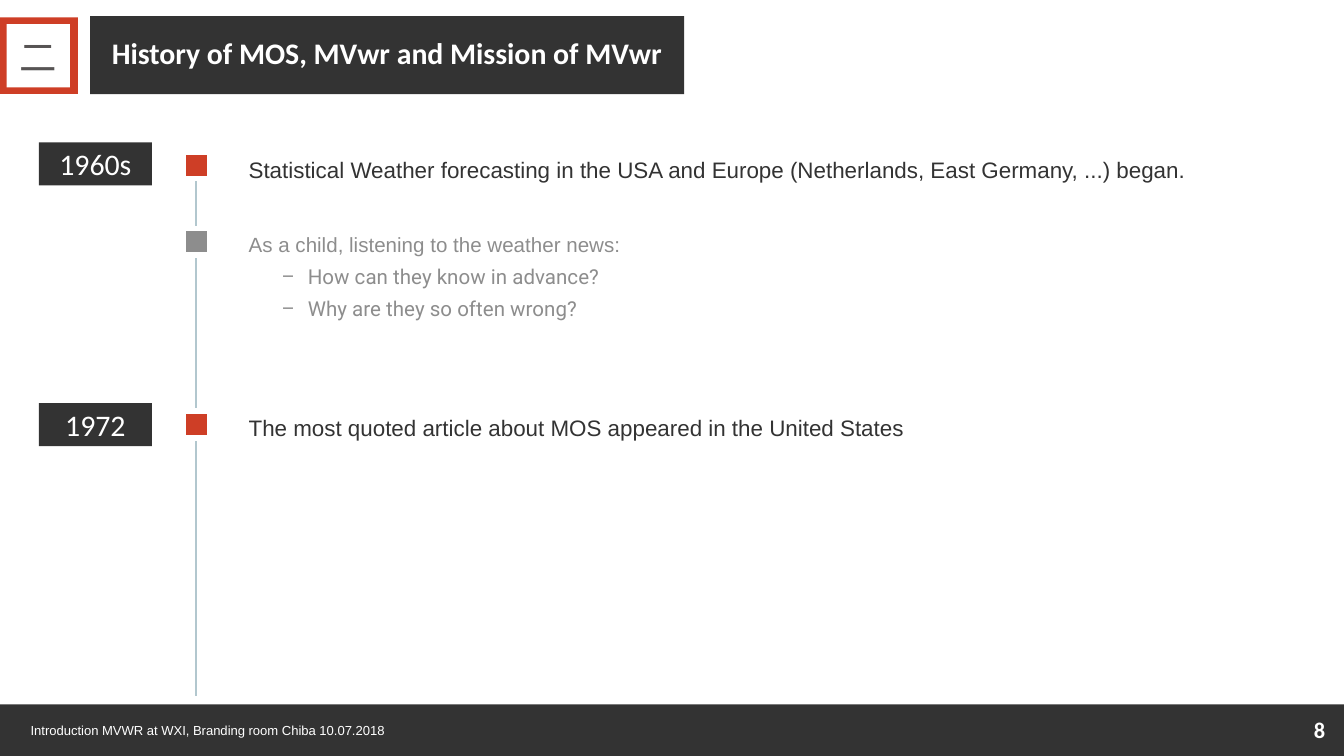
from pptx import Presentation
from pptx.dml.color import RGBColor
from pptx.enum.shapes import MSO_CONNECTOR, MSO_SHAPE
from pptx.enum.text import MSO_ANCHOR as Anchor, PP_ALIGN as Align
from pptx.oxml.ns import qn
from pptx.util import Inches, Pt
from lxml import etree

DARK = RGBColor(0x33, 0x33, 0x33)
RED = RGBColor(0xCE, 0x3E, 0x26)
GREY = RGBColor(0x8D, 0x8D, 0x8D)
SYMBOL_GREY = RGBColor(0x57, 0x54, 0x54)
LINE_BLUE = RGBColor(0xB2, 0xC7, 0xCE)
WHITE = RGBColor(0xFF, 0xFF, 0xFF)

# Widescreen slide, 16:9
presentation = Presentation()
presentation.slide_width = Inches(10)
presentation.slide_height = Inches(10) * 9 // 16
slide = presentation.slides.add_slide(presentation.slide_layouts[6])


def add_block(left, top, width, height, fill):
    shape = slide.shapes.add_shape(MSO_SHAPE.RECTANGLE, Inches(left), Inches(top),
                                   Inches(width), Inches(height))
    shape.shadow.inherit = False
    shape.fill.solid()
    shape.fill.fore_color.rgb = fill
    shape.line.fill.background()
    return shape


def write_text(shape, text, size, font_name, color, align, anchor, bold=False):
    frame = shape.text_frame
    frame.text = text
    frame.word_wrap = True
    frame.vertical_anchor = anchor
    frame.margin_left = frame.margin_right = Inches(0.05)
    frame.margin_top = frame.margin_bottom = Inches(0.02)
    paragraph = frame.paragraphs[0]
    paragraph.alignment = align
    font = paragraph.runs[0].font
    font.size, font.name, font.bold = Pt(size), font_name, bold
    font.color.rgb = color


# Footer
add_block(0, 5.24, 10, 0.39, DARK)
page_number = slide.shapes.add_textbox(Inches(8.43), Inches(5.2), Inches(1.48), Inches(0.35))
write_text(page_number, "8", 12, "Calibri", WHITE, Align.RIGHT, Anchor.BOTTOM, bold=True)
footer = slide.shapes.add_textbox(Inches(0.13), Inches(5.32), Inches(4.1), Inches(0.22))
write_text(footer, "Introduction MVWR at WXI, Branding room Chiba 10.07.2018",
           7, "Arial", WHITE, Align.LEFT, Anchor.MIDDLE)
footer.text_frame.margin_left = Inches(0.1)

# Section symbol and title
add_block(0, 0.13, 0.58, 0.57, RED)
add_block(0.05, 0.18, 0.47, 0.47, WHITE)
symbol = slide.shapes.add_textbox(Inches(0.05), Inches(0.19), Inches(0.47), Inches(0.46))
write_text(symbol, "二", 20, "Calibri", SYMBOL_GREY, Align.CENTER, Anchor.MIDDLE)
title = add_block(0.67, 0.12, 4.42, 0.58, DARK)
write_text(title, "History of MOS, MVwr and Mission of MVwr", 16, "Calibri",
           WHITE, Align.CENTER, Anchor.MIDDLE, bold=True)
title.text_frame.paragraphs[0].line_spacing = 0.9

# Year labels
for year, top in (("1960s", 1.06), ("1972", 3)):
    label = add_block(0.29, top, 0.84, 0.32, DARK)
    write_text(label, year, 16, "Calibri", WHITE, Align.CENTER, Anchor.MIDDLE)

# Timeline markers
markers = []
for top, color in ((1.13, RED), (1.7, GREY), (3.06, RED)):
    marker = add_block(1.36, top, 0.2, 0.2, color)
    marker.line.color.rgb = WHITE
    marker.line.width = Pt(3)
    markers.append(marker)

# Timeline axis, starting at the first marker and lying behind all of them
axis = slide.shapes.add_connector(MSO_CONNECTOR.STRAIGHT, Inches(1.46), Inches(1.33),
                                  Inches(1.46), Inches(5.18))
axis.begin_connect(markers[0], 2)
axis.line.color.rgb = LINE_BLUE
axis.line.width = Pt(1)
etree.SubElement(axis._element.spPr, qn("a:effectLst"))
markers[0]._element.addprevious(axis._element)

# Events: text, size, font, colour, space before, is a dash item
events = [
    ("Statistical Weather forecasting in the USA and Europe "
     "(Netherlands, East Germany, ...) began.", 12, "Arial", DARK, 0, False),
    ("As a child, listening to the weather news:", 11, "Arial", GREY, 20, False),
    ("How can they know in advance?", 11, "Roboto", GREY, 3.8, True),
    ("Why are they so often wrong?", 11, "Roboto", GREY, 3.8, True),
    ("The most quoted article about MOS appeared in the United States",
     12, "Arial", DARK, 43, False),
]
body = slide.shapes.add_textbox(Inches(1.8), Inches(1.06), Inches(7.38), Inches(3.94))
frame = body.text_frame
frame.word_wrap = True
frame.margin_left = frame.margin_right = Inches(0.05)
frame.margin_top, frame.margin_bottom = 0, Inches(0.02)
for index, (text, size, font_name, color, space, is_item) in enumerate(events):
    paragraph = frame.add_paragraph() if index else frame.paragraphs[0]
    paragraph.text = text
    if space:
        paragraph.space_before = Pt(space)
    if is_item:
        paragraph.level = 1
        properties = paragraph._p.get_or_add_pPr()
        properties.set("marL", str(Inches(0.44)))
        properties.set("indent", str(Inches(-0.19)))
        bullet_color = etree.SubElement(properties, qn("a:buClr"))
        etree.SubElement(bullet_color, qn("a:srgbClr"), val=str(GREY))
        etree.SubElement(properties, qn("a:buFont"), typeface="Arial")
        etree.SubElement(properties, qn("a:buChar"), char="−")
    else:
        paragraph.line_spacing = 1.5
    font = paragraph.runs[0].font
    font.size, font.name = Pt(size), font_name
    font.color.rgb = color

presentation.save("out.pptx")
